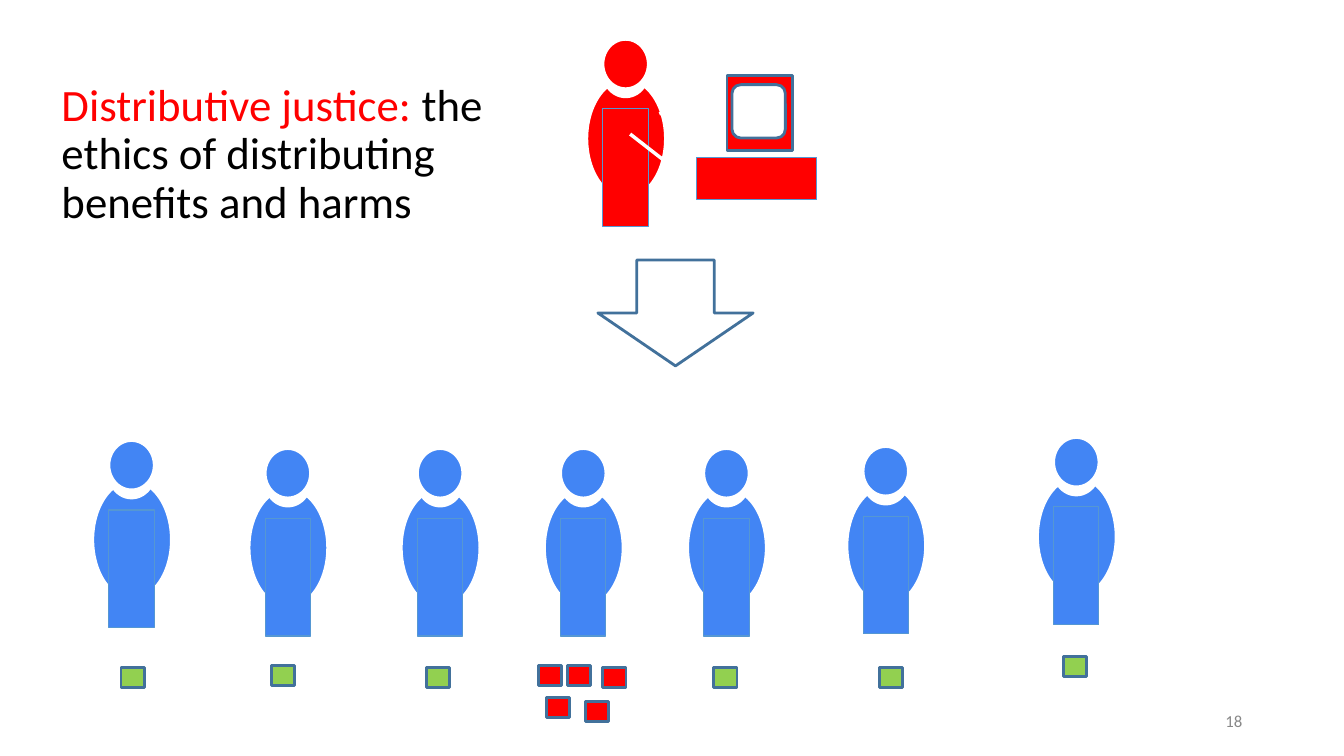
from lxml.etree import SubElement
from pptx import Presentation
from pptx.dml.color import RGBColor
from pptx.enum.shapes import MSO_CONNECTOR, MSO_SHAPE as SHAPE
from pptx.enum.text import MSO_ANCHOR, MSO_AUTO_SIZE, PP_ALIGN
from pptx.oxml.ns import qn
from pptx.util import Pt

EMU_PER_PX = 9144  # 100 px to the inch
TITLE_ONLY = 5
FONT = "Calibri"

RED = RGBColor(0xFF, 0x00, 0x00)
BLUE = RGBColor(0x42, 0x85, 0xF4)
GREEN = RGBColor(0x92, 0xD0, 0x50)
WHITE = RGBColor(0xFF, 0xFF, 0xFF)
BLACK = RGBColor(0x00, 0x00, 0x00)
GREY = RGBColor(0x88, 0x88, 0x88)
STEEL = RGBColor(0x42, 0x71, 0x9B)
SKY = RGBColor(0x55, 0x97, 0xD3)

# left edge and head top of each person in the lower row
PEOPLE = [(92, 437), (247, 445), (398, 445), (540, 445), (682, 445), (840, 443), (1029, 434)]
BENEFITS = [(120, 662), (269, 660), (423, 662), (708, 662), (872, 662), (1055, 651)]
HARMS = [(534, 660), (563, 660), (598, 662), (542, 692), (581, 696)]


def px(*lengths):
    return [length * EMU_PER_PX for length in lengths]


def add_figure(page, kind, box, fill, line=STEEL, width=2):
    """Add a filled preset shape; box is left, top, width, height."""
    shape = page.shapes.add_shape(kind, *px(*box))
    shape.shadow.inherit = False
    shape.fill.solid()
    shape.fill.fore_color.rgb = fill
    shape.line.color.rgb = line
    shape.line.width = Pt(width)
    return shape


def add_person(page, left, top, color):
    add_figure(page, SHAPE.OVAL, (left, top + 40, 78, 117), color, WHITE)
    add_figure(page, SHAPE.OVAL, (left + 16, top + 8, 45, 49), WHITE, WHITE)
    add_figure(page, SHAPE.OVAL, (left + 16, top, 45, 49), color, WHITE)
    add_figure(page, SHAPE.RECTANGLE, (left + 16, top + 69, 45, 117), color, SKY, 0.75)


def add_tokens(page, places, color):
    for left, top in places:
        add_figure(page, SHAPE.RECTANGLE, (left, top, 23, 20), color)


def add_arm(page, *ends):
    arm = page.shapes.add_connector(MSO_CONNECTOR.STRAIGHT, *px(*ends))
    arm.line.color.rgb = WHITE
    arm.line.width = Pt(2.5)
    SubElement(arm._element.spPr, qn("a:effectLst"))


def add_computer(page):
    add_figure(page, SHAPE.RECTANGLE, (721, 75, 65, 74), RED)
    add_figure(page, SHAPE.ROUNDED_RECTANGLE, (726, 84, 53, 53), WHITE)
    add_figure(page, SHAPE.RECTANGLE, (691, 156, 119, 42), RED, SKY, 0.75)


def set_title(page):
    title = page.shapes.title
    title.left, title.top, title.width, title.height = px(51, 77, 482, 155)
    frame = title.text_frame
    frame.word_wrap = True
    frame.auto_size = MSO_AUTO_SIZE.NONE
    frame.vertical_anchor = MSO_ANCHOR.TOP
    para = frame.paragraphs[0]
    para.alignment = PP_ALIGN.LEFT
    para.line_spacing = 0.9
    para.font.name = FONT
    para.font.size = Pt(32)
    for text, color in (
        ("Distributive justice: ", RED),
        ("the ethics of distributing benefits and harms", BLACK),
    ):
        span = para.add_run()
        span.text = text
        span.font.color.rgb = color


def add_page_number(page, number):
    frame = page.shapes.add_textbox(*px(942, 695, 300, 40)).text_frame
    frame.word_wrap = True
    frame.vertical_anchor = MSO_ANCHOR.MIDDLE
    para = frame.paragraphs[0]
    para.text = number
    para.alignment = PP_ALIGN.RIGHT
    para.font.name = FONT
    para.font.size = Pt(12)
    para.font.color.rgb = GREY


def main():
    deck = Presentation()
    deck.slide_width, deck.slide_height = px(1333, 750)
    page = deck.slides.add_slide(deck.slide_layouts[TITLE_ONLY])

    set_title(page)
    add_page_number(page, "18")
    add_tokens(page, BENEFITS, GREEN)
    add_tokens(page, HARMS, RED)
    for left, top in PEOPLE:
        add_person(page, left, top, BLUE)

    add_person(page, 582, 39, RED)
    add_arm(page, 654, 113, 692, 98)
    add_arm(page, 625, 133, 679, 175)
    add_computer(page)
    add_figure(page, SHAPE.DOWN_ARROW, (593, 258, 154, 105), WHITE)

    deck.save("out.pptx")


if __name__ == "__main__":
    main()
